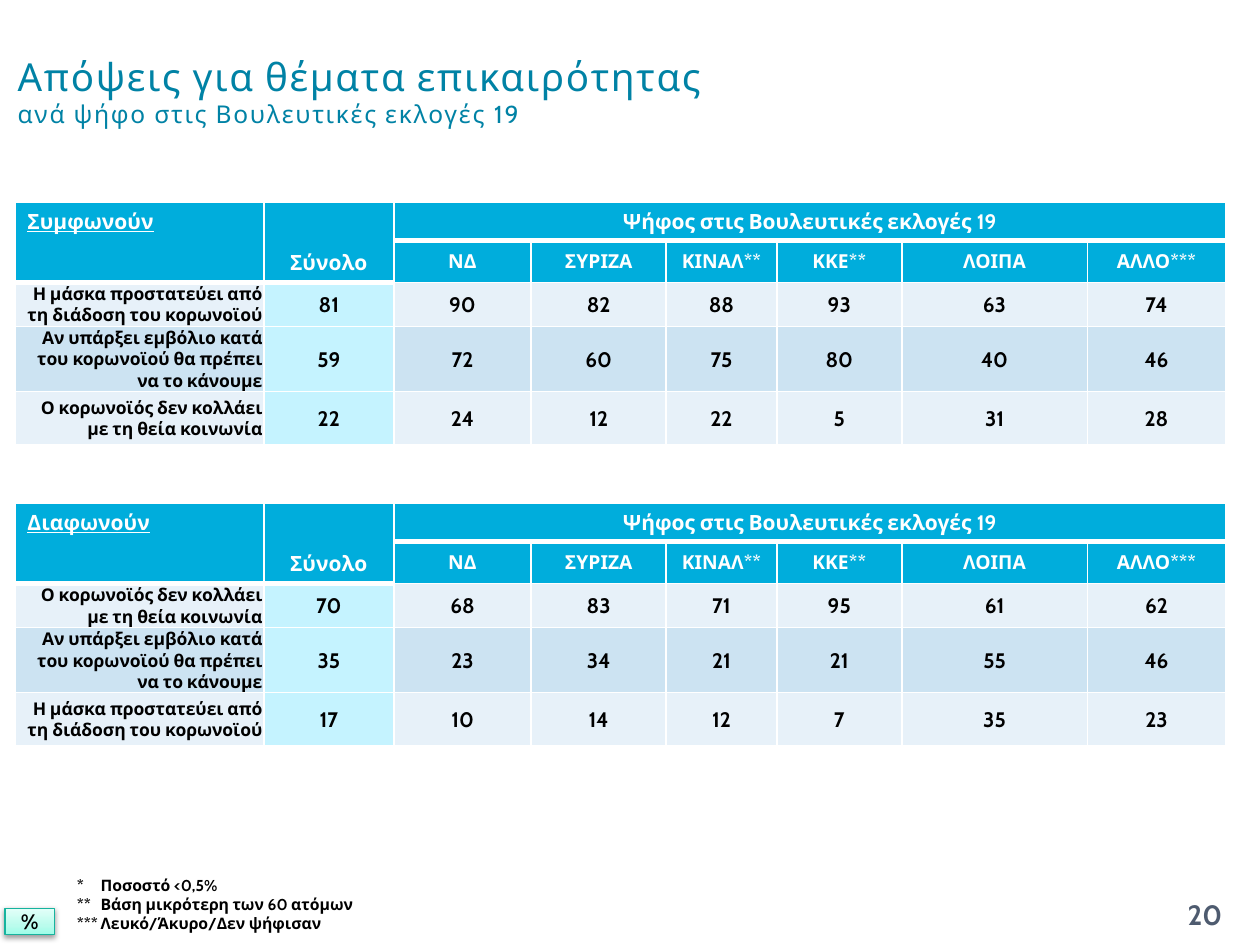
from dataclasses import dataclass
from pptx import Presentation
from pptx.dml.color import RGBColor as RGB
from pptx.enum.shapes import MSO_SHAPE as Kind
from pptx.enum.text import MSO_ANCHOR as Anchor, MSO_AUTO_SIZE as Auto, PP_ALIGN as Align
from pptx.oxml import parse_xml
from pptx.oxml.ns import nsdecls
from pptx.util import Cm, Pt


@dataclass(frozen=True)
class Theme:
    font: str = "Cabin"
    white: str = "FFFFFF"
    black: str = "000000"
    title: str = "0082A5"
    page: str = "4E5B6F"
    head: str = "00ADDC"
    total: str = "C5F3FF"
    bands: tuple = ("E7F1F9", "CCE3F2")
    edge: str = "16B39E"
    glow: tuple = ((0, "9DFDE8"), (35, "BBFCED"), (100, "E4FFF9"))
    big: int = 22
    sub: int = 14
    num: int = 16
    body: int = 12
    party: int = 11
    label: int = 10
    note: int = 9


T = Theme()
COLS = (5.02, 2.62, 2.77, 2.72, 2.23, 2.52, 3.74, 2.79)
ROWS = (0.74, 0.84, 0.88, 1.3, 1.07)
VOTE = "Ψήφος στις Βουλευτικές εκλογές 19"
PARTIES = ("ΝΔ", "ΣΥΡΙΖΑ", "ΚΙΝΑΛ**", "ΚΚΕ**", "ΛΟΙΠΑ", "ΑΛΛΟ***")
MASK = "Η μάσκα προστατεύει από τη διάδοση του κορωνοϊού"
SHOT = "Αν υπάρξει εμβόλιο κατά του κορωνοϊού θα πρέπει να το κάνουμε"
HOLY = "Ο κορωνοϊός δεν κολλάει με τη θεία κοινωνία"
AGREE = (
    (MASK, 81, 90, 82, 88, 93, 63, 74),
    (SHOT, 59, 72, 60, 75, 80, 40, 46),
    (HOLY, 22, 24, 12, 22, 5, 31, 28),
)
DENY = (
    (HOLY, 70, 68, 83, 71, 95, 61, 62),
    (SHOT, 35, 23, 34, 21, 21, 55, 46),
    (MASK, 17, 10, 14, 12, 7, 35, 23),
)
NOTES = (
    ("*", "Ποσοστό <0,5%"),
    ("**", "Βάση μικρότερη των 60 ατόμων"),
    ("***", "Λευκό/Άκυρο/Δεν ψήφισαν"),
)


def style(para, size, color, align=Align.LEFT, bold=True):
    para.alignment = align
    font = para.font
    font.name, font.size, font.bold = T.font, Pt(size), bold
    font.color.rgb = RGB.from_string(color)


def paint(cell, color, base):
    cell.fill.solid()
    cell.fill.fore_color.rgb = RGB.from_string(color)
    props = cell._tc.get_or_add_tcPr()
    for i, side in enumerate("LRTB"):
        width = Pt(base if side == "B" else 1)
        props.insert(i, parse_xml(
            f'<a:ln{side} {nsdecls("a")} w="{width}"><a:solidFill>'
            f'<a:srgbClr val="{T.white}"/></a:solidFill></a:ln{side}>'))


def write(cell, text, size, color, align=Align.CENTER, anchor=Anchor.MIDDLE):
    cell.text = str(text)
    cell.vertical_anchor = anchor
    style(cell.text_frame.paragraphs[0], size, color, align)


def add_grid(slide, top, name, data):
    frame = slide.shapes.add_table(
        len(ROWS), len(COLS), Cm(0.3), Cm(top), Cm(sum(COLS)), Cm(sum(ROWS)))
    grid = frame.table
    grid.first_row = grid.horz_banding = False
    for col, width in zip(grid.columns, COLS):
        col.width = Cm(width)
    for row, height in zip(grid.rows, ROWS):
        row.height = Cm(height)

    for r in range(2):
        for c in range(len(COLS)):
            paint(grid.cell(r, c), T.head, 3 if r == 0 or c < 2 else 1)
    for c in range(2):
        grid.cell(0, c).merge(grid.cell(1, c))
    grid.cell(0, 2).merge(grid.cell(0, len(COLS) - 1))
    write(grid.cell(0, 0), name, T.body, T.white, Align.LEFT, Anchor.TOP)
    grid.cell(0, 0).text_frame.paragraphs[0].font.underline = True
    write(grid.cell(0, 1), "Σύνολο", T.body, T.white, anchor=Anchor.BOTTOM)
    write(grid.cell(0, 2), VOTE, T.body, T.white)
    for c, party in enumerate(PARTIES, 2):
        write(grid.cell(1, c), party, T.party, T.white)

    for r, line in enumerate(data):
        for c, value in enumerate(line):
            cell = grid.cell(r + 2, c)
            paint(cell, T.total if c == 1 else T.bands[r % 2], 1)
            cell.margin_left = cell.margin_right = cell.margin_top = Cm(0.03)
            cell.margin_bottom = 0
            if c == 0:
                write(cell, value, T.label, T.black, Align.RIGHT)
            else:
                write(cell, value, T.body, T.black)


def set_title(slide):
    title = slide.shapes.title
    title.left, title.top, title.width, title.height = Cm(0.1), Cm(0.33), Cm(17.4), Cm(3)
    frame = title.text_frame
    frame.auto_size, frame.vertical_anchor = Auto.NONE, Anchor.MIDDLE
    para = frame.paragraphs[0]
    style(para, T.big, T.title, bold=False)
    head = para.add_run()
    head.text = "Απόψεις για θέματα επικαιρότητας"
    para.add_line_break()
    tail = para.add_run()
    tail.text = "ανά ψήφο στις Βουλευτικές εκλογές 19"
    tail.font.size = Pt(T.sub)
    for run in (head, tail):
        run._r.get_or_add_rPr().set("spc", "100")


def add_page(slide):
    box = slide.shapes.add_textbox(Cm(23.29), Cm(17.93), Cm(2), Cm(1.02))
    frame = box.text_frame
    frame.word_wrap, frame.vertical_anchor = True, Anchor.MIDDLE
    frame.text = "20"
    style(frame.paragraphs[0], T.num, T.page, Align.CENTER)


def add_badge(slide):
    badge = slide.shapes.add_shape(Kind.RECTANGLE, Cm(0.1), Cm(18.31), Cm(1), Cm(0.53))
    badge.line.color.rgb = RGB.from_string(T.edge)
    badge.line.width = Pt(0.75)
    badge.shadow.inherit = False
    stops = "".join(
        f'<a:gs pos="{pos * 1000}"><a:srgbClr val="{color}"/></a:gs>' for pos, color in T.glow)
    props = badge._element.spPr
    props.insert(2, parse_xml(
        f'<a:gradFill {nsdecls("a")} rotWithShape="1"><a:gsLst>{stops}</a:gsLst>'
        '<a:lin ang="16200000" scaled="1"/></a:gradFill>'))
    props[-1].append(parse_xml(
        f'<a:outerShdw {nsdecls("a")} blurRad="{Pt(3.1)}" dist="{Pt(1.6)}" dir="5400000" '
        f'rotWithShape="0"><a:srgbClr val="{T.black}"><a:alpha val="38000"/></a:srgbClr>'
        '</a:outerShdw>'))
    frame = badge.text_frame
    frame.vertical_anchor = Anchor.MIDDLE
    frame.text = "%"
    style(frame.paragraphs[0], T.body, T.black, Align.CENTER)


def add_notes(slide):
    box = slide.shapes.add_textbox(Cm(1.3), Cm(17.53), Cm(6.8), Cm(1.42))
    frame = box.text_frame
    frame.word_wrap, frame.auto_size = True, Auto.SHAPE_TO_FIT_TEXT
    for i, (mark, text) in enumerate(NOTES):
        para = frame.add_paragraph() if i else frame.paragraphs[0]
        para.text = f"{mark}\t{text}"
        para._p.get_or_add_pPr().append(parse_xml(
            f'<a:tabLst {nsdecls("a")}><a:tab pos="{Cm(0.48)}" algn="l"/></a:tabLst>'))
        style(para, T.note, T.black)


def main():
    deck = Presentation()
    deck.slide_width, deck.slide_height = Cm(25.4), Cm(19.05)
    slide = deck.slides.add_slide(deck.slide_layouts[5])
    set_title(slide)
    add_grid(slide, 4.08, "Συμφωνούν", AGREE)
    add_grid(slide, 10.15, "Διαφωνούν", DENY)
    add_page(slide)
    add_badge(slide)
    add_notes(slide)
    deck.save("out.pptx")


if __name__ == "__main__":
    main()
